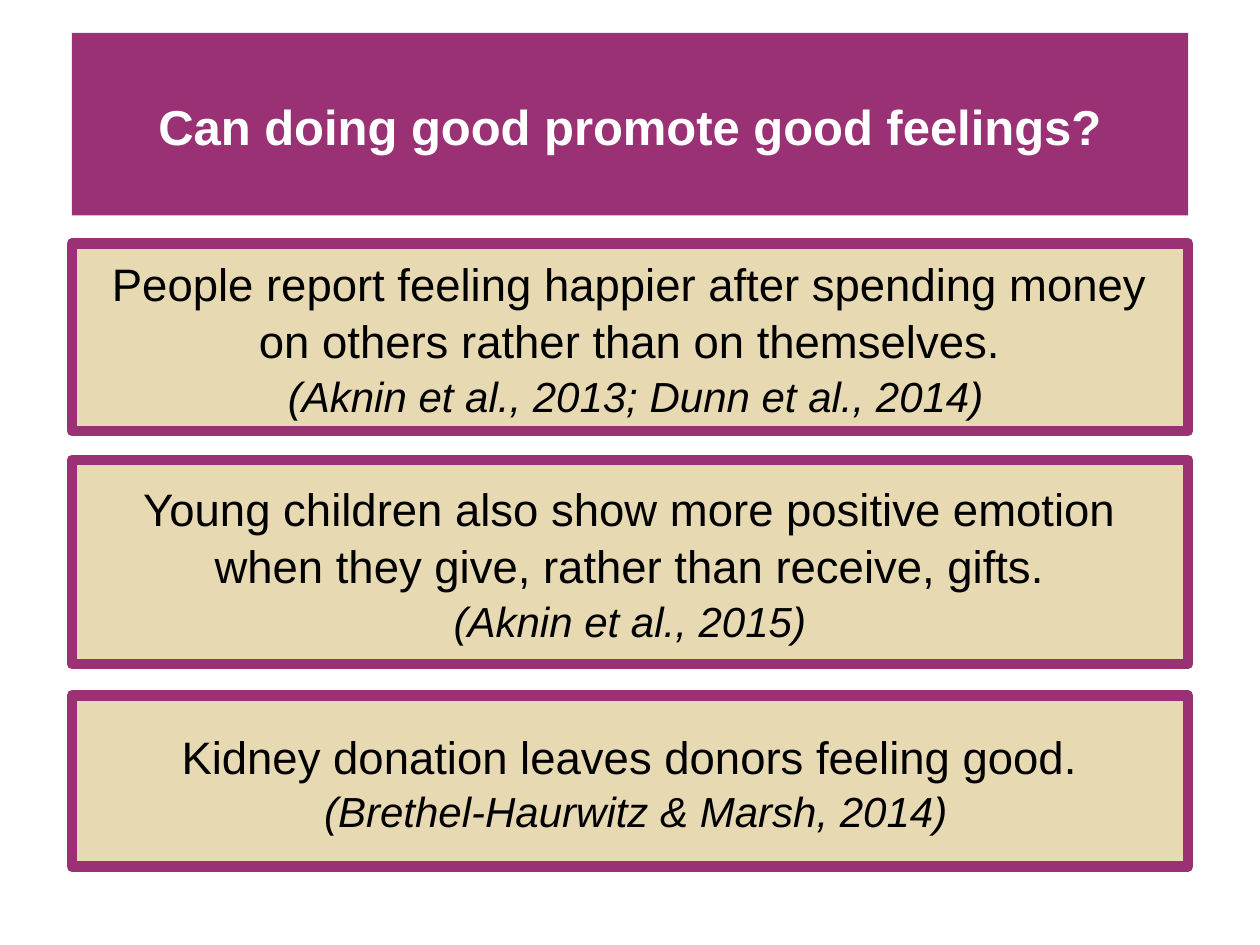
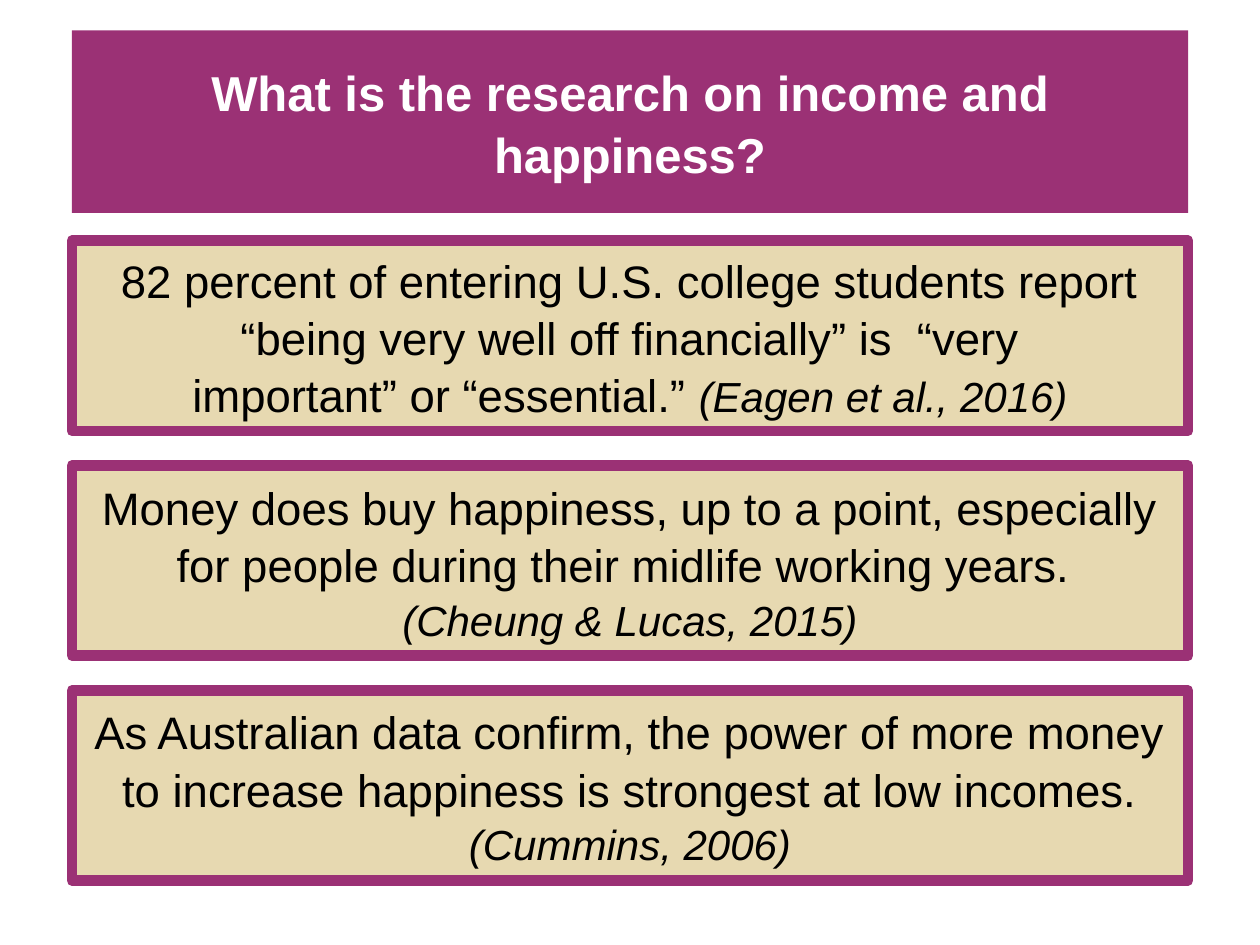
import pptx
import pptx.util
import pptx.dml.color
import pptx.enum.shapes
import pptx.enum.text

Pt = pptx.util.Pt

PLUM, SAND, WHITE, BLACK = "9B3175", "E7D9B1", "FFFFFF", "000000"
FONT = "Arial"
LEFT, WIDTH, TITLE_HEIGHT = 41.04, 637.92, 104.4

STATEMENT = {"size": 26, "color": BLACK}
CITATION = {"size": 24, "color": BLACK, "italic": True}
HEADING = {"size": 28, "color": WHITE, "bold": True}

SLIDES = [
    {
        "title": "Can doing good promote good feelings?",
        "title_top": 18.75,
        "rows": [(139, 107.3), (262.8, 116.6), (397.4, 97.9)],
        "findings": [
            [[("People report feeling happier after spending money on others rather than on themselves.", STATEMENT)],
             [(" (Aknin et al., 2013; Dunn et al., 2014)", CITATION)]],
            [[("Young children also show more positive emotion when they give, rather than receive, gifts.", STATEMENT)],
             [("(Aknin et al., 2015)", CITATION)]],
            [[("Kidney donation leaves donors feeling good.", STATEMENT)],
             [(" (Brethel-Haurwitz & Marsh, 2014)", CITATION)]],
        ],
    },
    {
        "title": "What is the research on income and happiness?",
        "title_top": 17.3,
        "rows": [(137.5 + 128.5 * i, 108.7) for i in range(3)],
        "findings": [
            [[("82 percent of entering U.S. college students report “being very well off financially” is  “very", STATEMENT)],
             [("important” or “essential.” ", STATEMENT), ("(Eagen et al., 2016)", CITATION)]],
            [[("Money does buy happiness, up to a point, especially for people during their midlife working years. ", STATEMENT)],
             [("(Cheung & Lucas, 2015)", CITATION)]],
            [[("As Australian data confirm, the power of more money", STATEMENT)],
             [("to increase happiness is strongest at low incomes. ", STATEMENT), ("(Cummins, 2006)", CITATION)]],
        ],
    },
]


def rgb(color):
    return pptx.dml.color.RGBColor.from_string(color)


def add_run(p, text, size, color, bold=False, italic=False):
    r = p.add_run()
    r.text = text
    r.font.name = FONT
    r.font.size = Pt(size)
    r.font.color.rgb = rgb(color)
    r.font.bold = bold
    r.font.italic = italic


def add_box(s, top, height, fill, paragraphs, line=None):
    sp = s.shapes.add_shape(pptx.enum.shapes.MSO_SHAPE.RECTANGLE,
                            Pt(LEFT), Pt(top), Pt(WIDTH), Pt(height))
    sp.shadow.inherit = False
    sp.fill.solid()
    sp.fill.fore_color.rgb = rgb(fill)
    if line:
        sp.line.color.rgb = rgb(line)
        sp.line.width = Pt(6)
    else:
        sp.line.fill.background()
    tf = sp.text_frame
    tf.word_wrap = True
    tf.vertical_anchor = pptx.enum.text.MSO_ANCHOR.MIDDLE
    for i, runs in enumerate(paragraphs):
        p = tf.add_paragraph() if i else tf.paragraphs[0]
        p.alignment = pptx.enum.text.PP_ALIGN.CENTER
        p.line_spacing = 1.05
        for text, style in runs:
            add_run(p, text, **style)


def main():
    prs = pptx.Presentation()
    prs.slide_width, prs.slide_height = Pt(720), Pt(540)
    for content in SLIDES:
        s = prs.slides.add_slide(prs.slide_layouts[6])
        add_box(s, content["title_top"], TITLE_HEIGHT, PLUM, [[(content["title"], HEADING)]])
        for (top, height), finding in zip(content["rows"], content["findings"]):
            add_box(s, top, height, SAND, finding, PLUM)
    prs.save("out.pptx")


if __name__ == "__main__":
    main()
